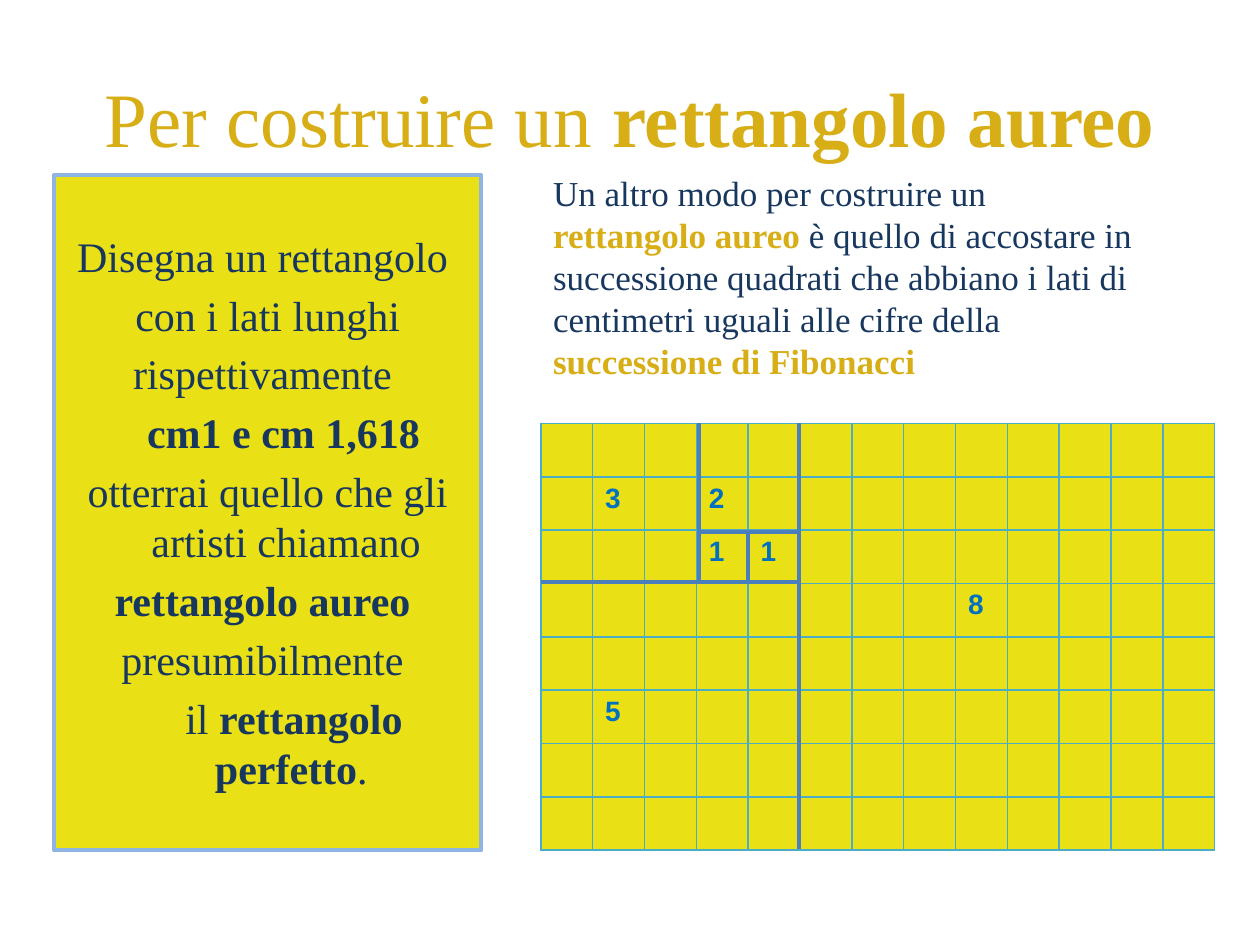
from lxml import etree
from pptx import Presentation, util as u
from pptx.dml.color import RGBColor
from pptx.enum import shapes, text
from pptx.oxml.ns import qn

Pt = u.Pt
INK = dict(gold="D8AE16", navy="17375E", fill="EAE016", edge="8EB4E3",
           grid="4BACC6", num="0070C0", line="4B7EBC")
SERIF = "Times New Roman"

TITLE = [[("Per costruire un ", "gold", False), ("rettangolo aureo", "gold", True)]]
INTRO = [
    [("Un altro modo per costruire un", "navy", False)],
    [("rettangolo aureo", "gold", True),
     (" è quello di accostare in successione quadrati che abbiano i lati di "
      "centimetri uguali alle cifre della ", "navy", False),
     ("successione di Fibonacci", "gold", True)],
]
STEPS = [
    (0, [("Disegna un rettangolo ", "navy", False)]),
    (0, [("con i lati lunghi", "navy", False)]),
    (0, [("rispettivamente ", "navy", False)]),
    (18, [("cm1 e cm 1,618", "navy", True)]),
    (0, [("otterrai quello che gli artisti chiamano ", "navy", False)]),
    (0, [("rettangolo aureo ", "navy", True)]),
    (0, [("presumibilmente ", "navy", False)]),
    (30, [("il ", "navy", False), ("rettangolo perfetto", "navy", True),
          (".", "navy", False)]),
]
ROWS, COLS = 8, 13
LEFT, TOP, WIDE, HIGH = 309, 242, 385.2, 244
NUMS = {(1, 1): "3", (1, 3): "2", (2, 3): "1", (2, 4): "1", (3, 8): "8", (5, 1): "5"}
X3, X4, X5 = 399.6, 427.7, 456.5
Y2, Y3, END = 303.8, 332.6, 485.3
LINES = [(LEFT, Y3, X5, Y3), (X3, Y3, X3, TOP), (X5, TOP, X5, END),
         (X3, Y2, X5, Y2), (X4, Y2, X4, Y3)]


def tint(name):
    return RGBColor.from_string(INK[name])


def style(run, size, face, color, bold):
    font = run.font
    font.size, font.name, font.bold = Pt(size), face, bold
    font.color.rgb = tint(color)


def write(frame, paras, size, align):
    frame.word_wrap = True
    for i, parts in enumerate(paras):
        para = frame.paragraphs[0] if i == 0 else frame.add_paragraph()
        para.alignment = align
        for words, color, bold in parts:
            run = para.add_run()
            run.text = words
            style(run, size, SERIF, color, bold)


def border(cell):
    props = cell._tc.get_or_add_tcPr()
    for i, side in enumerate(("lnL", "lnR", "lnT", "lnB")):
        line = etree.Element(qn("a:" + side), w=str(Pt(1)))
        fill = etree.SubElement(line, qn("a:solidFill"))
        etree.SubElement(fill, qn("a:srgbClr"), val=INK["grid"])
        props.insert(i, line)


deck = Presentation()
deck.slide_width, deck.slide_height = Pt(720), Pt(540)
slide = deck.slides.add_slide(deck.slide_layouts[6])
items = slide.shapes

title = items.add_textbox(Pt(36), Pt(21.6), Pt(648), Pt(90)).text_frame
title.vertical_anchor = text.MSO_ANCHOR.MIDDLE
write(title, TITLE, 44, text.PP_ALIGN.CENTER)

box = items.add_shape(shapes.MSO_SHAPE.RECTANGLE, Pt(31), Pt(100), Pt(244), Pt(386))
box.shadow.inherit = False
box.fill.solid()
box.fill.fore_color.rgb = tint("fill")
box.line.color.rgb = tint("edge")
box.line.width = Pt(2.25)
frame = box.text_frame
frame.vertical_anchor = text.MSO_ANCHOR.TOP
frame.margin_top = Pt(31.6)
write(frame, [parts for _, parts in STEPS], 24, text.PP_ALIGN.CENTER)
for para, (shift, _) in zip(frame.paragraphs, STEPS):
    para.space_before = Pt(4.8)
    props = para._p.get_or_add_pPr()
    props.set("marL", str(Pt(27)))
    props.set("indent", str(Pt(shift - 27)))

intro = items.add_textbox(Pt(LEFT), Pt(94.3), Pt(360), Pt(128)).text_frame
write(intro, INTRO, 20, text.PP_ALIGN.LEFT)

grid = items.add_table(ROWS, COLS, Pt(LEFT), Pt(TOP), Pt(WIDE), Pt(HIGH)).table
grid.first_row = grid.horz_banding = False
for col in grid.columns:
    col.width = Pt(WIDE / COLS)
for r, row in enumerate(grid.rows):
    row.height = Pt(HIGH / ROWS)
    for c, cell in enumerate(row.cells):
        cell.fill.solid()
        cell.fill.fore_color.rgb = tint("fill")
        border(cell)
        if (r, c) in NUMS:
            cell.text_frame.text = NUMS[r, c]
            style(cell.text_frame.paragraphs[0].runs[0], 16, "Arial", "num", True)

for ends in LINES:
    line = items.add_connector(shapes.MSO_CONNECTOR.STRAIGHT, *map(Pt, ends))
    line.line.color.rgb = tint("line")
    line.line.width = Pt(2.25)
    etree.SubElement(line._element.spPr, qn("a:effectLst"))

deck.save("out.pptx")
